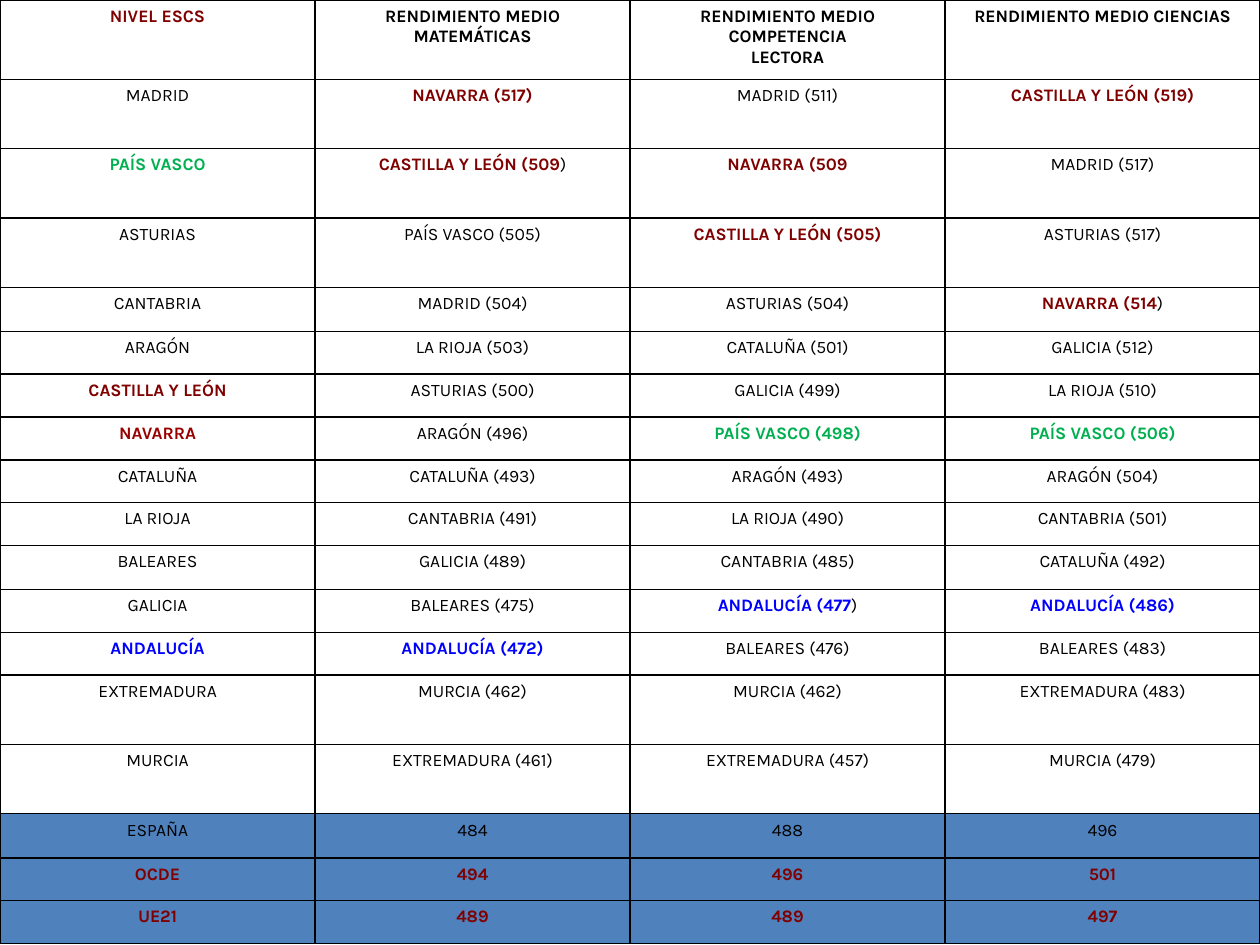
from dataclasses import dataclass
from typing import Union

from lxml.etree import SubElement
from pptx import Presentation
from pptx.dml.color import RGBColor
from pptx.enum.text import MSO_ANCHOR, PP_ALIGN
from pptx.oxml.ns import qn
from pptx.util import Inches, Pt

COLORS = {
    "black": "000000",
    "white": "FFFFFF",
    "maroon": "800000",
    "red": "990000",
    "green": "00B050",
    "blue": "0000FF",
    "band": "4F81BD",
}
TEXT_FORMAT = {"name": "Karla", "size": Pt(10)}
CELL_FORMAT = {
    "margin_left": Inches(0.1),
    "margin_right": Inches(0.1),
    "margin_top": Inches(0.05),
    "margin_bottom": Inches(0.05),
    "vertical_anchor": MSO_ANCHOR.TOP,
}


@dataclass(frozen=True)
class Marked:
    """Bold coloured text, with an optional plain ending."""
    text: str
    color: str
    ending: str = ""


Entry = Union[str, Marked]


@dataclass(frozen=True)
class Row:
    height: float
    entries: tuple[Entry, ...]
    fill: str = "white"


def marked_row(height: float, texts: tuple[str, ...], color: str, fill: str) -> Row:
    return Row(height, tuple(Marked(text, color) for text in texts), fill)


def maroon(text: str, ending: str = "") -> Marked:
    return Marked(text, "maroon", ending)


def green(text: str) -> Marked:
    return Marked(text, "green")


def blue(text: str, ending: str = "") -> Marked:
    return Marked(text, "blue", ending)


def header(text: str) -> Marked:
    return Marked(text, "black")


# Regions ranked by socio-economic level and by mean score
ROWS = [
    Row(0.63, (maroon("NIVEL ESCS"), header("RENDIMIENTO MEDIO MATEMÁTICAS"),
               header("RENDIMIENTO MEDIO COMPETENCIA\nLECTORA"),
               header("RENDIMIENTO MEDIO CIENCIAS"))),
    Row(0.55, ("MADRID", maroon("NAVARRA (517)"), "MADRID (511)",
               maroon("CASTILLA Y LEÓN (519)"))),
    Row(0.55, (green("PAÍS VASCO"), maroon("CASTILLA Y LEÓN (509", ")"),
               maroon("NAVARRA (509"), "MADRID (517)")),
    Row(0.55, ("ASTURIAS", "PAÍS VASCO (505)", maroon("CASTILLA Y LEÓN (505)"),
               "ASTURIAS (517)")),
    Row(0.35, ("CANTABRIA", "MADRID (504)", "ASTURIAS (504)", maroon("NAVARRA (514", ")"))),
    Row(0.34, ("ARAGÓN", "LA RIOJA (503)", "CATALUÑA (501)", "GALICIA (512)")),
    Row(0.34, (maroon("CASTILLA Y LEÓN"), "ASTURIAS (500)", "GALICIA (499)",
               "LA RIOJA (510)")),
    Row(0.34, (Marked("NAVARRA", "red"), "ARAGÓN (496)", green("PAÍS VASCO (498)"),
               green("PAÍS VASCO (506)"))),
    Row(0.34, ("CATALUÑA", "CATALUÑA (493)", "ARAGÓN (493)", "ARAGÓN (504)")),
    Row(0.34, ("LA RIOJA", "CANTABRIA (491)", "LA RIOJA (490)", "CANTABRIA (501)")),
    Row(0.35, ("BALEARES", "GALICIA (489)", "CANTABRIA (485)", "CATALUÑA (492)")),
    Row(0.34, ("GALICIA", "BALEARES (475)", blue("ANDALUCÍA (477", ")"),
               blue("ANDALUCÍA (486)"))),
    Row(0.34, (blue("ANDALUCÍA"), blue("ANDALUCÍA (472)"), "BALEARES (476)",
               "BALEARES (483)")),
    Row(0.55, ("EXTREMADURA", "MURCIA (462)", "MURCIA (462)", "EXTREMADURA (483)")),
    Row(0.55, ("MURCIA", "EXTREMADURA (461)", "EXTREMADURA (457)", "MURCIA (479)")),
    # Overall averages
    Row(0.35, ("ESPAÑA", "484", "488", "496"), "band"),
    marked_row(0.34, ("OCDE", "494", "496", "501"), "maroon", "band"),
    marked_row(0.34, ("UE21", "489", "489", "497"), "maroon", "band"),
]


def rgb(color: str) -> RGBColor:
    return RGBColor.from_string(COLORS[color])


def add_run(paragraph, text: str, color: str, bold: bool) -> None:
    run = paragraph.add_run()
    run.text = text
    for attribute, value in {**TEXT_FORMAT, "bold": bold}.items():
        setattr(run.font, attribute, value)
    run.font.color.rgb = rgb(color)


def add_borders(cell) -> None:
    """Draw thin black lines; they must precede the fill in the XML."""
    properties = cell._tc.get_or_add_tcPr()
    for side in ("a:lnL", "a:lnR", "a:lnT", "a:lnB"):
        line = SubElement(properties, qn(side), w=str(Pt(1)))
        fill = SubElement(line, qn("a:solidFill"))
        SubElement(fill, qn("a:srgbClr"), val=COLORS["black"])


def fill_cell(cell, entry: Entry, fill: str) -> None:
    for attribute, value in CELL_FORMAT.items():
        setattr(cell, attribute, value)
    add_borders(cell)
    cell.fill.solid()
    cell.fill.fore_color.rgb = rgb(fill)

    frame = cell.text_frame
    text = entry.text if isinstance(entry, Marked) else entry
    for index, line in enumerate(text.split("\n")):
        paragraph = frame.add_paragraph() if index else frame.paragraphs[0]
        paragraph.alignment = PP_ALIGN.CENTER
        if isinstance(entry, Marked):
            add_run(paragraph, line, entry.color, True)
        else:
            add_run(paragraph, line, "black", False)
    if isinstance(entry, Marked) and entry.ending:
        add_run(paragraph, entry.ending, "black", False)


def add_ranking(slide, rows: list[Row], width: float, height: float) -> None:
    column_count = len(rows[0].entries)
    ranking = slide.shapes.add_table(
        len(rows), column_count, 0, 0, Inches(width), Inches(height)).table
    ranking.first_row = False
    ranking.horz_banding = False
    for column in ranking.columns:
        column.width = Inches(width / column_count)
    for row_index, row in enumerate(rows):
        ranking.rows[row_index].height = Inches(row.height)
        for column_index, entry in enumerate(row.entries):
            fill_cell(ranking.cell(row_index, column_index), entry, row.fill)


def main() -> None:
    width, height = 10, 7.5
    presentation = Presentation()
    presentation.slide_width = Inches(width)
    presentation.slide_height = Inches(height)
    slide = presentation.slides.add_slide(presentation.slide_layouts[6])
    add_ranking(slide, ROWS, width, height)
    presentation.save("out.pptx")


if __name__ == "__main__":
    main()
